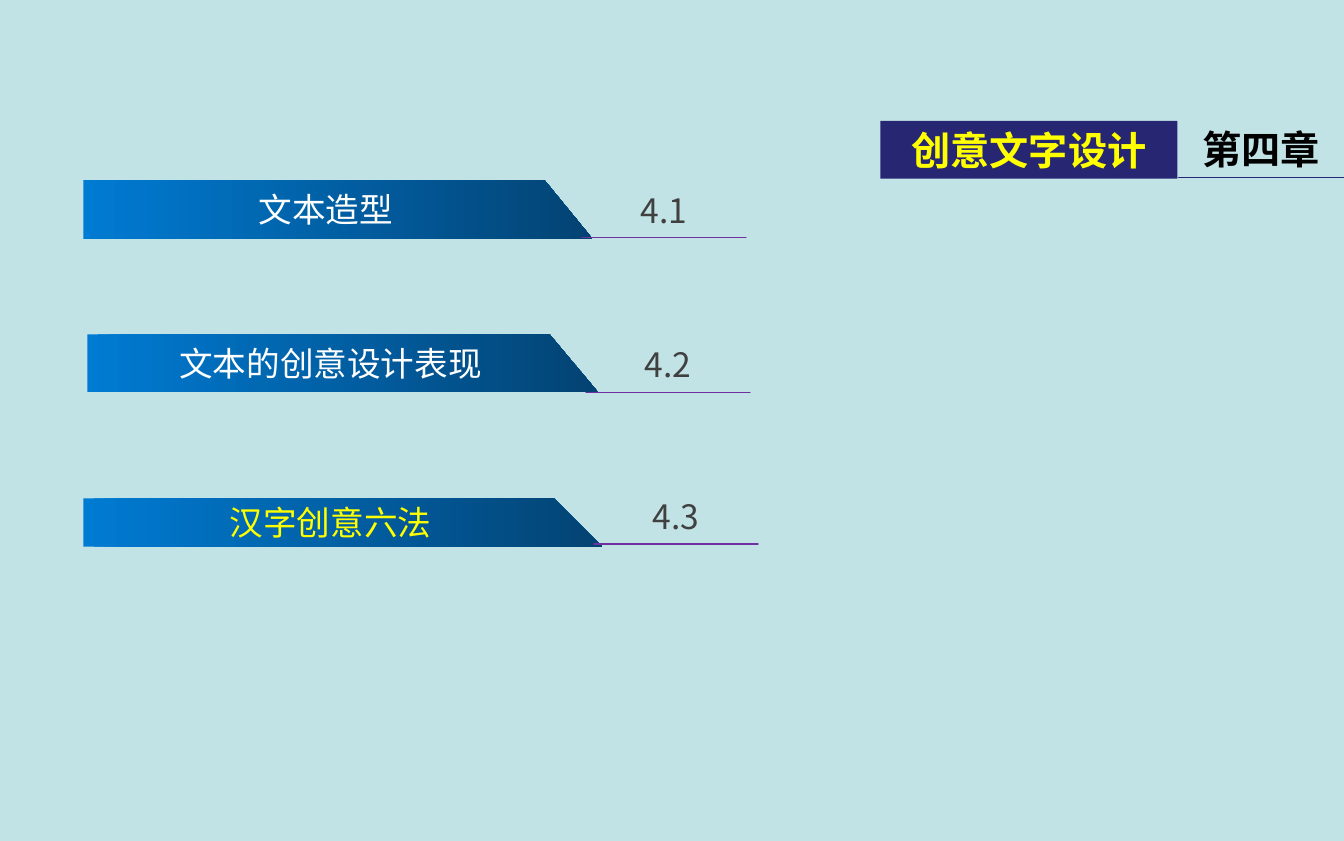
from lxml import etree
from pptx import Presentation
from pptx import util as u
from pptx.dml.color import RGBColor
from pptx.enum import shapes, text
from pptx.oxml.ns import qn

FONT = "Noto Sans CJK SC"
COLORS = {
    "background": "C2E3E5", "navy": "262673", "yellow": "FFFF00",
    "black": "000000", "white": "FFFFFF", "gray": "404040",
    "purple": "7030A0", "blue": "007BD3", "deep_blue": "034373",
}
CHAPTER = ("创意文字设计", "第四章")
SECTIONS = [
    {"number": "4.1", "title": "文本造型", "color": "white",
     "banner": (0.62, 1.34, 3.79, 0.44), "label": (4.33, 1.35)},
    {"number": "4.2", "title": "文本的创意设计表现", "color": "white",
     "banner": (0.65, 2.49, 3.8, 0.43), "label": (4.36, 2.5)},
    {"number": "4.3", "title": "汉字创意六法", "color": "yellow",
     "banner": (0.62, 3.71, 3.86, 0.36), "label": (4.42, 3.63)},
]
SLANT = 0.36
LABEL_SIZE = (1.22, 0.42)


def rgb(name):
    return RGBColor.from_string(COLORS[name])


def points(*pairs):
    return [(u.Inches(x), u.Inches(y)) for x, y in pairs]


def write(sp, content, size, color, insets, bold=False):
    tf = sp.text_frame
    tf.word_wrap = True
    tf.vertical_anchor = text.MSO_ANCHOR.MIDDLE
    tf.margin_left, tf.margin_top, tf.margin_right, tf.margin_bottom = map(u.Inches, insets)
    p = tf.paragraphs[0]
    p.alignment = text.PP_ALIGN.CENTER
    r = p.add_run()
    r.text = content
    r.font.size = u.Pt(size)
    r.font.bold = bold
    r.font.color.rgb = rgb(color)
    r.font.name = FONT
    etree.SubElement(r.font._element, qn("a:ea"), typeface=FONT)


def add_banner(s, box, title, color):
    x, y, w, h = box
    builder = s.shapes.build_freeform(u.Inches(x), u.Inches(y))
    builder.add_line_segments(points((x + w - SLANT, y), (x + w, y + h), (x, y + h)))
    sp = builder.convert_to_shape()
    sp.shadow.inherit = False
    sp.line.fill.background()
    sp.fill.gradient()
    sp.fill.gradient_angle = 0
    for stop, name in zip(sp.fill.gradient_stops, ("blue", "deep_blue")):
        stop.color.rgb = rgb(name)
    write(sp, title, 18, color, (0.06, 0, 0.24, 0))


def add_label(s, box, content, size, color, line_color, bold=False):
    x, y, w, h = box
    builder = s.shapes.build_freeform(u.Inches(x), u.Inches(y + h))
    builder.add_line_segments(points((x + w, y + h)))
    builder.move_to(u.Inches(x), u.Inches(y))
    builder.add_line_segments(points((x, y)))
    sp = builder.convert_to_shape()
    sp.shadow.inherit = False
    sp.fill.background()
    sp.line.color.rgb = rgb(line_color)
    sp.line.width = u.Pt(0.75)
    write(sp, content, size, color, (0, 0.04, 0, 0.04), bold)


prs = Presentation()
prs.slide_width, prs.slide_height = u.Inches(10), u.Inches(6.26)
s = prs.slides.add_slide(prs.slide_layouts[6])
s.background.fill.solid()
s.background.fill.fore_color.rgb = rgb("background")

title, chapter = CHAPTER
add_label(s, (8.77, 0.9, 1.23, 0.42), chapter, 21, "black", "navy", bold=True)
sp = s.shapes.add_shape(
    shapes.MSO_SHAPE.RECTANGLE, *map(u.Inches, (6.55, 0.9, 2.21, 0.43)))
sp.shadow.inherit = False
sp.fill.solid()
sp.fill.fore_color.rgb = rgb("navy")
sp.line.fill.background()
write(sp, title, 21, "yellow", (0.07, 0.04, 0.07, 0.04), bold=True)

for section in SECTIONS:
    add_banner(s, section["banner"], section["title"], section["color"])
    add_label(s, section["label"] + LABEL_SIZE, section["number"], 18, "gray", "purple")

prs.save("out.pptx")
